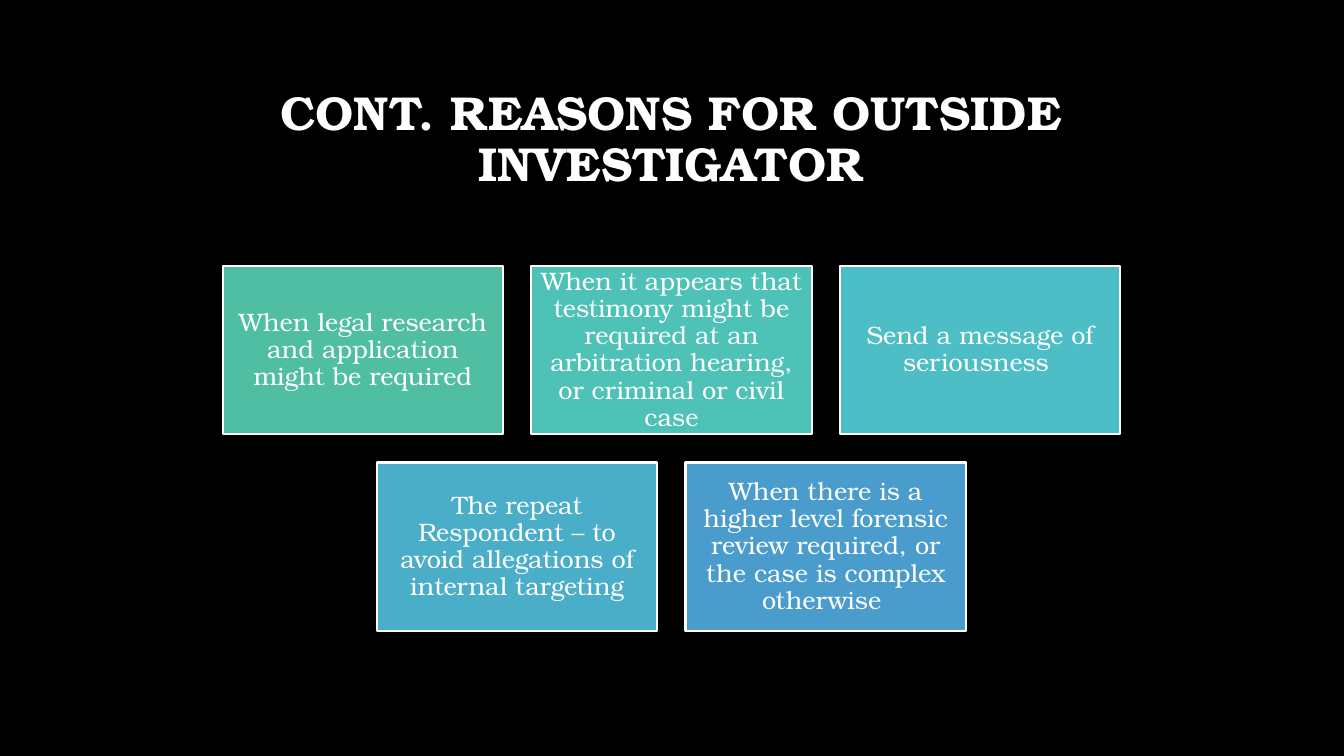
from dataclasses import dataclass

from pptx import Presentation
from pptx import util as u
from pptx.dml.color import RGBColor
from pptx.enum import shapes, text


@dataclass(frozen=True)
class Theme:
    font: str = "TeX Gyre Bonum"
    background: str = "000000"
    ink: str = "FFFFFF"
    cards: tuple = ("50BEA3", "4EC2B7", "4DBEC5", "4BAEC9", "4A9CCC")
    title_size: int = 34
    card_size: int = 18
    border: float = 1.5


@dataclass(frozen=True)
class Box:
    left: float
    top: float
    width: float
    height: float

    def lengths(self):
        return [u.Cm(n) for n in (self.left, self.top, self.width, self.height)]


THEME = Theme()
TITLE = "CONT. REASONS FOR OUTSIDE INVESTIGATOR"
REASON_ROWS = [
    [
        "When legal research and application might be required",
        "When it appears that testimony might be required at an arbitration hearing, "
        "or criminal or civil case",
        "Send a message of seriousness ",
    ],
    [
        "The repeat Respondent – to avoid allegations of internal targeting",
        "When there is a higher level forensic review required, "
        "or the case is complex otherwise ",
    ],
]


def write_centred(shape, wording, size, bold=False):
    frame = shape.text_frame
    frame.word_wrap = True
    frame.vertical_anchor = text.MSO_ANCHOR.MIDDLE
    para = frame.paragraphs[0]
    para.alignment = text.PP_ALIGN.CENTER
    para.line_spacing = 0.9
    span = para.add_run()
    span.text = wording
    span.font.name = THEME.font
    span.font.size = u.Pt(size)
    span.font.bold = bold
    span.font.color.rgb = RGBColor.from_string(THEME.ink)
    return frame


def add_title(page, box):
    heading = page.shapes.add_textbox(*box.lengths())
    write_centred(heading, TITLE, THEME.title_size, bold=True)


def add_card(page, box, wording, colour):
    card = page.shapes.add_shape(shapes.MSO_SHAPE.RECTANGLE, *box.lengths())
    card.shadow.inherit = False
    card.fill.solid()
    card.fill.fore_color.rgb = RGBColor.from_string(colour)
    card.line.color.rgb = RGBColor.from_string(THEME.ink)
    card.line.width = u.Pt(THEME.border)
    frame = write_centred(card, wording, THEME.card_size)
    frame.margin_left = frame.margin_right = u.Cm(0.18)
    frame.margin_top = frame.margin_bottom = u.Cm(0.18)


def add_reasons(page, box, gap):
    columns = max(len(row) for row in REASON_ROWS)
    width = (box.width - gap * (columns - 1)) / columns
    height = (box.height - gap * (len(REASON_ROWS) - 1)) / len(REASON_ROWS)
    colours = iter(THEME.cards)
    for index, row in enumerate(REASON_ROWS):
        indent = (columns - len(row)) * (width + gap) / 2
        top = box.top + index * (height + gap)
        for column, wording in enumerate(row):
            left = box.left + indent + column * (width + gap)
            add_card(page, Box(left, top, width, height), wording, next(colours))


def main():
    deck = Presentation()
    deck.slide_width = u.Cm(33.87)
    deck.slide_height = u.Cm(19.05)
    page = deck.slides.add_slide(deck.slide_layouts[6])
    page.background.fill.solid()
    page.background.fill.fore_color.rgb = RGBColor.from_string(THEME.background)
    add_title(page, Box(2.54, 1.7, 28.75, 3.68))
    add_reasons(page, Box(5.61, 6.7, 22.62, 9.2), gap=0.71)
    deck.save("out.pptx")


if __name__ == "__main__":
    main()
